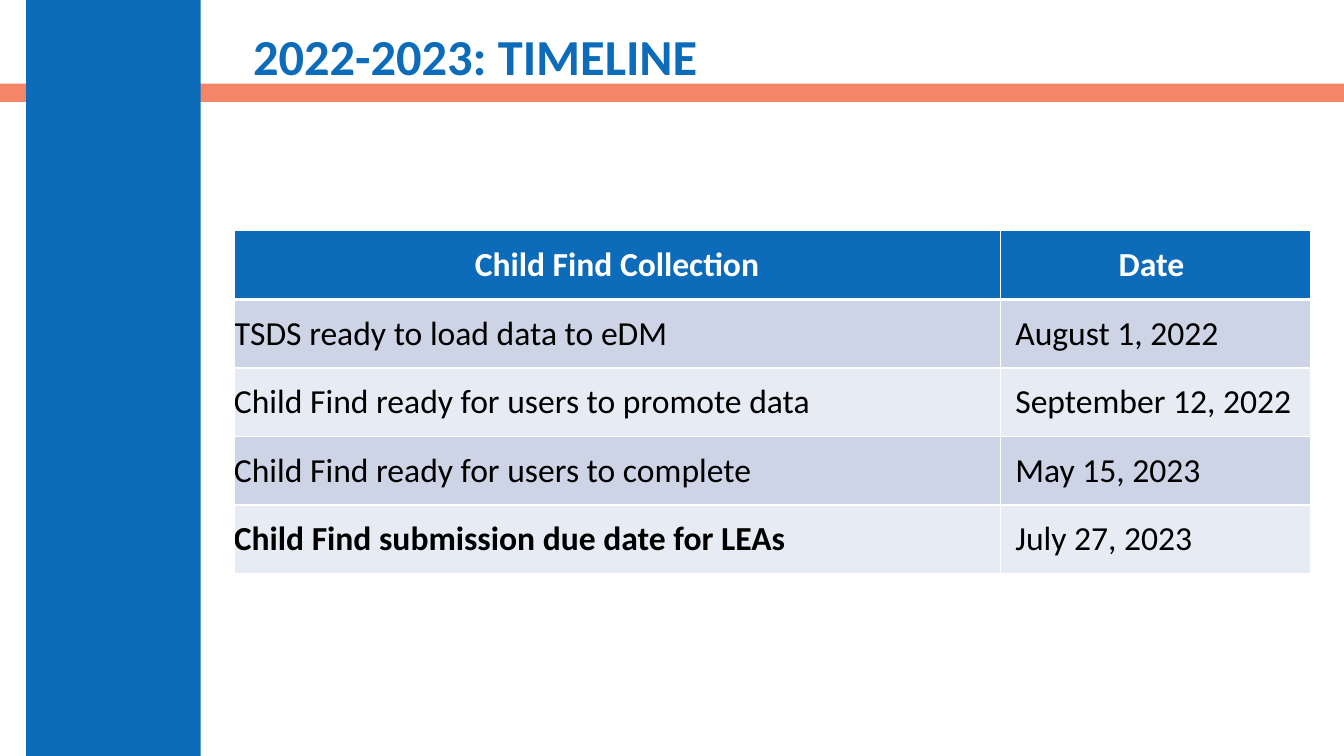
"""Builds the 2022-2023 Child Find timeline slide."""
from lxml import etree
from pptx import Presentation
from pptx.dml.color import RGBColor
from pptx.enum import shapes, text
from pptx.oxml import ns
from pptx.util import Inches, Pt

THEME = {
    "font": "Calibri", "title_size": 36, "table_size": 24,
    "blue": "0D6CB9", "coral": "F16038", "white": "FFFFFF", "black": "000000",
    "bands": ("CCD4E6", "E7EBF3"),
}
COLUMNS = (7.6, 3.08)
ROW_HEIGHT = 0.68
DATE_INDENT = 0.15
TIMELINE = (
    ("Child Find Collection", "Date"),
    ("TSDS ready to load data to eDM", "August 1, 2022"),
    ("Child Find ready for users to promote data", "September 12, 2022"),
    ("Child Find ready for users to complete", "May 15, 2023"),
    ("Child Find submission due date for LEAs", "July 27, 2023"),
)


def write(para, words, size, color, bold):
    span = para.add_run()
    span.text = words
    span.font.color.rgb = RGBColor.from_string(color)
    for name, value in {"name": THEME["font"], "size": Pt(size), "bold": bold}.items():
        setattr(span.font, name, value)


def add_border(cell, side, points):
    properties = cell._tc.get_or_add_tcPr()
    line = etree.SubElement(properties, ns.qn(f"a:ln{side}"), w=str(Pt(points)))
    fill = etree.SubElement(line, ns.qn("a:solidFill"))
    etree.SubElement(fill, ns.qn("a:srgbClr"), val=THEME["white"])


deck = Presentation()
deck.slide_width, deck.slide_height = Inches(13.33), Inches(7.5)
page = deck.slides.add_slide(deck.slide_layouts[5])

title = page.shapes.title
title_place = {"left": 2.41, "top": 0.18, "width": 10.53, "height": 0.82}
for name, value in title_place.items():
    setattr(title, name, Inches(value))
title.text_frame.vertical_anchor = text.MSO_ANCHOR.MIDDLE
para = title.text_frame.paragraphs[0]
para.alignment = text.PP_ALIGN.LEFT
para.line_spacing = 0.9
write(para, "2022-2023: TIMELINE", THEME["title_size"], THEME["blue"], True)

bars = (
    ("coral", 76, (0, Inches(0.83), deck.slide_width, Inches(0.18))),
    ("blue", 100, (Inches(0.26), 0, Inches(1.73), deck.slide_height)),
)
for color, opacity, place in bars:
    bar = page.shapes.add_shape(shapes.MSO_SHAPE.RECTANGLE, *place)
    bar.shadow.inherit = False
    bar.line.fill.background()
    bar.fill.solid()
    bar.fill.fore_color.rgb = RGBColor.from_string(THEME[color])
    if opacity < 100:
        shade = bar.element.spPr.find(f"{ns.qn('a:solidFill')}/{ns.qn('a:srgbClr')}")
        etree.SubElement(shade, ns.qn("a:alpha"), val=str(opacity * 1000))
    title.element.addprevious(bar.element)

table = page.shapes.add_table(
    len(TIMELINE), len(COLUMNS), Inches(2.32), Inches(2.29),
    Inches(sum(COLUMNS)), Inches(ROW_HEIGHT * len(TIMELINE))).table
for column, width in zip(table.columns, COLUMNS):
    column.width = Inches(width)

for r, entries in enumerate(TIMELINE):
    table.rows[r].height = Inches(ROW_HEIGHT)
    header = r == 0
    for c, words in enumerate(entries):
        cell = table.cell(r, c)
        is_date = c == 1
        cell_format = {
            "margin_left": Inches(DATE_INDENT if is_date and not header else 0),
            "margin_right": Inches(0.08 if is_date and header else 0),
            "margin_top": 0, "margin_bottom": 0,
            "vertical_anchor": text.MSO_ANCHOR.MIDDLE,
        }
        for name, value in cell_format.items():
            setattr(cell, name, value)
        for side, points in {"L": 1, "R": 1, "T": 3 if r == 1 else 1,
                             "B": 3 if header else 1}.items():
            add_border(cell, side, points)
        cell.fill.solid()
        cell.fill.fore_color.rgb = RGBColor.from_string(
            THEME["blue"] if header else THEME["bands"][(r - 1) % 2])
        para = cell.text_frame.paragraphs[0]
        para.alignment = text.PP_ALIGN.CENTER if header else text.PP_ALIGN.LEFT
        is_due = r == len(TIMELINE) - 1 and not is_date
        write(para, words, THEME["table_size"],
              THEME["white" if header else "black"], header or is_due)

deck.save("out.pptx")
